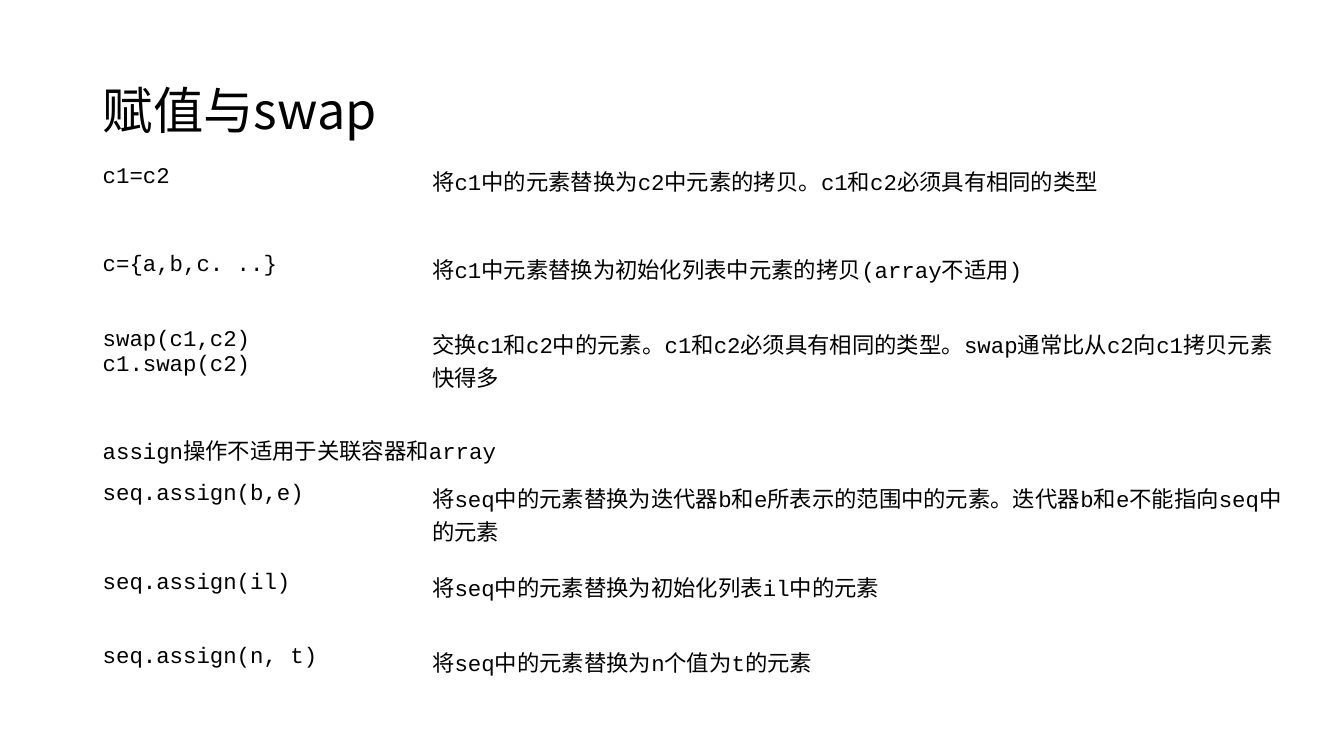
"""Build the slide on container assignment and swap."""
from pptx import Presentation
from pptx.dml.color import RGBColor as Rgb
from pptx.enum.text import MSO_ANCHOR as Anchor, MSO_AUTO_SIZE as AutoSize, PP_ALIGN as Align
from pptx.util import Pt
from lxml.etree import SubElement
from pptx.oxml.ns import qn

COLORS = {"text": "000000", "background": "FFFFFF"}
LEFT = 66.2
COLUMN_WIDTHS = [235.4, 626.4]
ROWS = [
    (63.4, ["c1=c2", "将c1中的元素替换为c2中元素的拷贝。c1和c2必须具有相同的类型"]),
    (53.3, ["c={a,b,c. ..}", "将c1中元素替换为初始化列表中元素的拷贝(array不适用)"]),
    (75.6, ["swap(c1,c2)\nc1.swap(c2)",
            "交换c1和c2中的元素。c1和c2必须具有相同的类型。swap通常比从c2向c1拷贝元素快得多"]),
    (34.6, ["assign操作不适用于关联容器和array"]),
    (63.4, ["seq.assign(b,e)",
            "将seq中的元素替换为迭代器b和e所表示的范围中的元素。迭代器b和e不能指向seq中的元素"]),
    (53.3, ["seq.assign(il)", "将seq中的元素替换为初始化列表il中的元素"]),
    (53.3, ["seq.assign(n, t)", "将seq中的元素替换为n个值为t的元素"]),
]


class SlideBuilder:
    """Hold the text style and the current slide."""

    title_font = asian_font = "Noto Sans CJK SC"
    code_font = "Courier New"
    title_size, code_size = 36, 16

    def __init__(self, deck):
        self.page = deck.slides.add_slide(deck.slide_layouts[5])
        fill = self.page.background.fill
        fill.solid()
        fill.fore_color.rgb = Rgb.from_string(COLORS["background"])

    def add_text(self, frame, text, font, size):
        for index, line in enumerate(text.split("\n")):
            para = frame.add_paragraph() if index else frame.paragraphs[0]
            para.alignment = Align.LEFT
            span = para.add_run()
            span.text = line
            span.font.size = Pt(size)
            span.font.color.rgb = Rgb.from_string(COLORS["text"])
            span.font.name = font
            SubElement(span.font._element, qn("a:ea"), typeface=self.asian_font)

    def add_title(self, text, left, top, width, height):
        box = self.page.shapes.title
        box.left, box.top, box.width, box.height = map(Pt, (left, top, width, height))
        frame = box.text_frame
        frame.auto_size = AutoSize.NONE
        frame.vertical_anchor = Anchor.MIDDLE
        self.add_text(frame, text, self.title_font, self.title_size)
        frame.paragraphs[0].line_spacing = 0.9

    def add_grid(self, rows, widths, left, top):
        height = sum(row_height for row_height, _ in rows)
        grid = self.page.shapes.add_table(
            len(rows), len(widths), Pt(left), Pt(top), Pt(sum(widths)), Pt(height)).table
        grid.first_row = grid.horz_banding = False
        for column, width in zip(grid.columns, widths):
            column.width = Pt(width)
        for index, (row_height, texts) in enumerate(rows):
            grid.rows[index].height = Pt(row_height)
            for cell in grid.rows[index].cells:
                cell.fill.background()
            if len(texts) < len(widths):
                grid.cell(index, 0).merge(grid.cell(index, len(widths) - 1))
            for column, text in enumerate(texts):
                self.add_text(grid.cell(index, column).text_frame, text,
                              self.code_font, self.code_size)


def main():
    deck = Presentation()
    deck.slide_width, deck.slide_height = Pt(960), Pt(540)
    builder = SlideBuilder(deck)
    builder.add_title("赋值与swap", LEFT, 28.8, 828, 104.4)
    builder.add_grid(ROWS, COLUMN_WIDTHS, LEFT, 113.8)
    deck.save("out.pptx")


if __name__ == "__main__":
    main()
